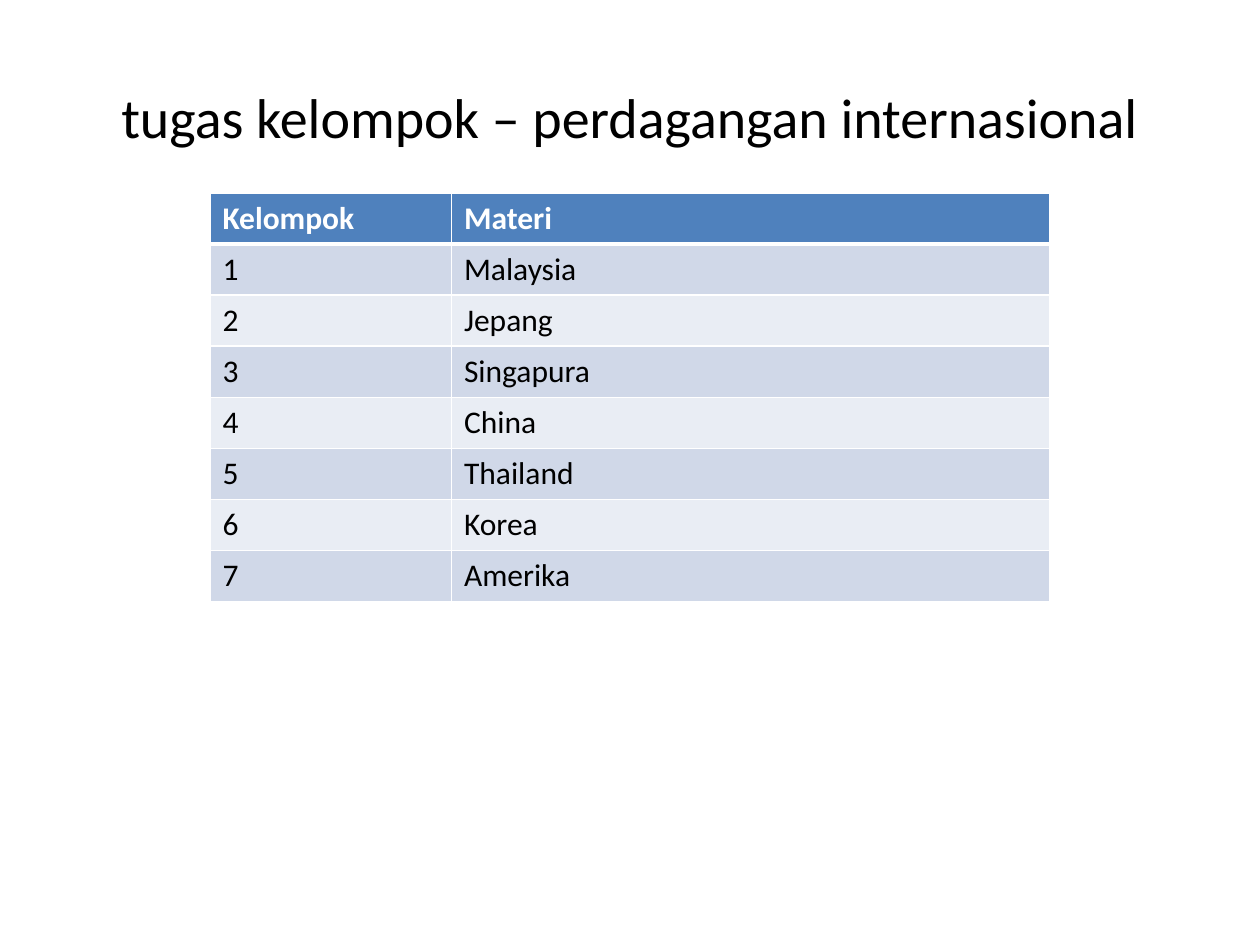
"""Build the group assignment slide on international trade."""
import pptx
import pptx.dml.color
import pptx.enum.text
import pptx.oxml
import pptx.oxml.ns
import pptx.util

Pt = pptx.util.Pt
RGBColor = pptx.dml.color.RGBColor

BLACK = RGBColor(0x00, 0x00, 0x00)
WHITE = RGBColor(0xFF, 0xFF, 0xFF)
HEADER_BLUE = RGBColor(0x4F, 0x81, 0xBD)
BAND_DARK = RGBColor(0xD0, 0xD8, 0xE8)
BAND_LIGHT = RGBColor(0xE9, 0xED, 0xF4)

COUNTRIES = ["Malaysia", "Jepang", "Singapura", "China", "Thailand", "Korea", "Amerika"]


def write_text(text_frame, text, *, font="Calibri", size=18, color=BLACK, bold=False,
               alignment=pptx.enum.text.PP_ALIGN.LEFT):
    paragraph = text_frame.paragraphs[0]
    paragraph.alignment = alignment
    run = paragraph.add_run()
    run.text = text
    run.font.name = font
    run.font.size = Pt(size)
    run.font.bold = bold
    run.font.color.rgb = color


class SlideBuilder:
    def __init__(self, presentation):
        self.slide = presentation.slides.add_slide(presentation.slide_layouts[5])
        self.border_color = WHITE

    def title(self, text, left, top, width, height):
        shape = self.slide.shapes.title
        shape.left, shape.top, shape.width, shape.height = map(Pt, (left, top, width, height))
        shape.text_frame.vertical_anchor = pptx.enum.text.MSO_ANCHOR.MIDDLE
        write_text(shape.text_frame, text, size=32,
                   alignment=pptx.enum.text.PP_ALIGN.CENTER)

    def border(self, cell, side, width):
        properties = cell._tc.get_or_add_tcPr()
        properties.append(pptx.oxml.parse_xml(
            f'<a:{side} {pptx.oxml.ns.nsdecls("a")} w="{Pt(width)}"><a:solidFill>'
            f'<a:srgbClr val="{self.border_color}"/></a:solidFill></a:{side}>'))

    def table(self, rows, left, top, column_widths, row_height):
        table = self.slide.shapes.add_table(
            len(rows), len(column_widths), Pt(left), Pt(top),
            Pt(sum(column_widths)), Pt(row_height * len(rows))).table
        for column, width in zip(table.columns, column_widths):
            column.width = Pt(width)
        for row_index, values in enumerate(rows):
            table.rows[row_index].height = Pt(row_height)
            header = row_index == 0
            band = BAND_DARK if row_index % 2 else BAND_LIGHT
            side_widths = {"lnL": 1, "lnR": 1, "lnT": 3 if row_index == 1 else 1,
                           "lnB": 3 if header else 1}
            for column_index, value in enumerate(values):
                cell = table.cell(row_index, column_index)
                for side, width in side_widths.items():
                    self.border(cell, side, width)
                cell.fill.solid()
                cell.fill.fore_color.rgb = HEADER_BLUE if header else band
                write_text(cell.text_frame, value, bold=header,
                           color=WHITE if header else BLACK)


def main():
    presentation = pptx.Presentation()
    presentation.slide_width, presentation.slide_height = Pt(720), Pt(540)
    builder = SlideBuilder(presentation)
    builder.title("tugas kelompok – perdagangan internasional", 36, 21.6, 648, 90)
    rows = [("Kelompok", "Materi")]
    rows += [(str(number), country) for number, country in enumerate(COUNTRIES, 1)]
    builder.table(rows, left=120, top=110.2, column_widths=(138, 342), row_height=29.2)
    presentation.save("out.pptx")


if __name__ == "__main__":
    main()
